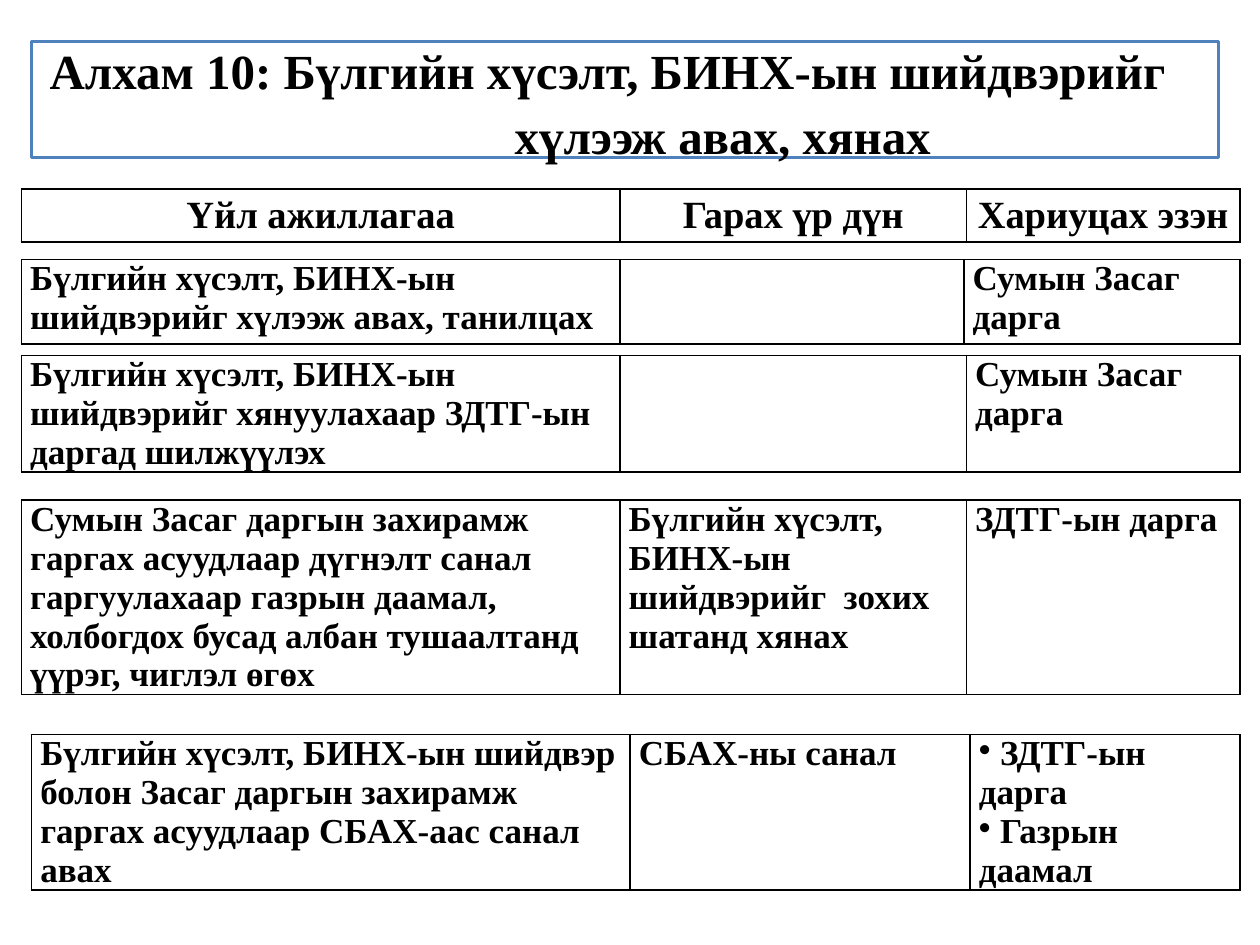
from dataclasses import dataclass

from lxml.etree import SubElement
from pptx import Presentation
from pptx.dml.color import RGBColor
from pptx.enum.shapes import MSO_SHAPE
from pptx.enum.text import MSO_ANCHOR, PP_ALIGN
from pptx.oxml import parse_xml
from pptx.oxml.ns import nsdecls, qn
from pptx.util import Inches, Pt


@dataclass(frozen=True)
class Theme:
    """Colours, font and type sizes of the slide."""
    font: str = "Times New Roman"
    ink: str = "000000"
    paper: str = "FFFFFF"
    frame: str = "4F81BD"
    title_size: int = 28
    header_size: int = 22
    body_size: int = 20
    border: int = 1


THEME = Theme()
TABLE_RIGHT = 9.84
ACTION_WIDTH = 4.75

TITLE_LINES = [
    ("Алхам 10: Бүлгийн хүсэлт, БИНХ-ын шийдвэрийг", "marR", 0.28),
    ("хүлээж авах, хянах", "marL", 1.83),
]
HEADER = ["Үйл ажиллагаа", "Гарах үр дүн", "Хариуцах эзэн"]
STEPS = [
    (0.17, 2.06, 0.67, 2.73, [
        "Бүлгийн хүсэлт, БИНХ-ын шийдвэрийг хүлээж авах, танилцах",
        "", "Сумын Засаг дарга"]),
    (0.17, 2.82, 0.92, 2.75, [
        "Бүлгийн хүсэлт, БИНХ-ын шийдвэрийг хянуулахаар ЗДТГ-ын даргад шилжүүлэх",
        "", "Сумын Засаг дарга"]),
    (0.17, 3.97, 1.54, 2.75, [
        "Сумын Засаг даргын захирамж гаргах асуудлаар дүгнэлт санал гаргуулахаар "
        "газрын даамал, холбогдох бусад албан тушаалтанд үүрэг, чиглэл өгөх",
        "Бүлгийн хүсэлт, БИНХ-ын шийдвэрийг  зохих шатанд хянах",
        "ЗДТГ-ын дарга"]),
    (0.25, 5.83, 1.23, 2.7, [
        "Бүлгийн хүсэлт, БИНХ-ын шийдвэр болон Засаг даргын захирамж "
        "гаргах асуудлаар СБАХ-аас санал авах",
        "СБАХ-ны санал",
        [" ЗДТГ-ын дарга", " Газрын даамал"]]),
]


def style_paragraph(paragraph, size, align):
    """Give a paragraph the slide's bold serif type."""
    paragraph.alignment = align
    paragraph.font.name = THEME.font
    paragraph.font.size = Pt(size)
    paragraph.font.bold = True
    paragraph.font.color.rgb = RGBColor.from_string(THEME.ink)


def add_bullet(paragraph):
    """Put a round bullet before a paragraph."""
    properties = paragraph._p.get_or_add_pPr()
    properties.set("marL", "0")
    properties.set("indent", "0")
    SubElement(properties, qn("a:buChar")).set("char", "•")


def draw_borders(cell):
    """Draw a thin line on all four sides of a cell."""
    properties = cell._tc.get_or_add_tcPr()
    for position, side in enumerate(("lnL", "lnR", "lnT", "lnB")):
        properties.insert(position, parse_xml(
            f'<a:{side} {nsdecls("a")} w="{Pt(THEME.border)}"><a:solidFill>'
            f'<a:srgbClr val="{THEME.ink}"/></a:solidFill></a:{side}>'))


def fill_cell(cell, content, size, align, anchor):
    """Write one text or a bulleted list into a bordered cell."""
    cell.margin_left = cell.margin_right = Inches(0.07)
    cell.margin_top = cell.margin_bottom = 0
    cell.vertical_anchor = anchor
    cell.fill.background()
    draw_borders(cell)
    bulleted = isinstance(content, list)
    lines = content if bulleted else [content]
    cell.text_frame.text = "\n".join(lines)
    for paragraph in cell.text_frame.paragraphs:
        if bulleted:
            add_bullet(paragraph)
        style_paragraph(paragraph, size, align)


def add_row_table(slide, left, top, height, result_width, contents,
                  size=THEME.body_size, align=PP_ALIGN.LEFT, anchor=MSO_ANCHOR.TOP):
    """Add a one-row table of action, result and owner."""
    width = TABLE_RIGHT - left
    table = slide.shapes.add_table(1, len(contents), Inches(left), Inches(top),
                                   Inches(width), Inches(height)).table
    table.first_row = table.horz_banding = False
    widths = (ACTION_WIDTH, result_width, width - ACTION_WIDTH - result_width)
    for column, column_width in zip(table.columns, widths):
        column.width = Inches(column_width)
    for cell, content in zip(table.rows[0].cells, contents):
        fill_cell(cell, content, size, align, anchor)


def add_title(slide):
    """Add the framed two-line heading."""
    heading = slide.shapes.add_shape(MSO_SHAPE.RECTANGLE, Inches(0.25), Inches(0.33),
                                     Inches(9.42), Inches(0.92))
    heading.shadow.inherit = False
    heading.fill.solid()
    heading.fill.fore_color.rgb = RGBColor.from_string(THEME.paper)
    heading.line.color.rgb = RGBColor.from_string(THEME.frame)
    heading.line.width = Pt(2)
    frame = heading.text_frame
    frame.word_wrap = True
    frame.vertical_anchor = MSO_ANCHOR.MIDDLE
    frame.text = "\n".join(text for text, _, _ in TITLE_LINES)
    for paragraph, (_, margin, inset) in zip(frame.paragraphs, TITLE_LINES):
        style_paragraph(paragraph, THEME.title_size, PP_ALIGN.CENTER)
        paragraph.line_spacing = 1.1
        paragraph._p.get_or_add_pPr().set(margin, str(Inches(inset)))


def main():
    """Build the slide and save it."""
    presentation = Presentation()
    presentation.slide_width = Inches(10)
    presentation.slide_height = Inches(7.5)
    slide = presentation.slides.add_slide(presentation.slide_layouts[6])
    add_title(slide)
    add_row_table(slide, 0.17, 1.5, 0.42, 2.75, HEADER,
                  THEME.header_size, PP_ALIGN.CENTER, MSO_ANCHOR.MIDDLE)
    for step in STEPS:
        add_row_table(slide, *step)
    presentation.save("out.pptx")


if __name__ == "__main__":
    main()
